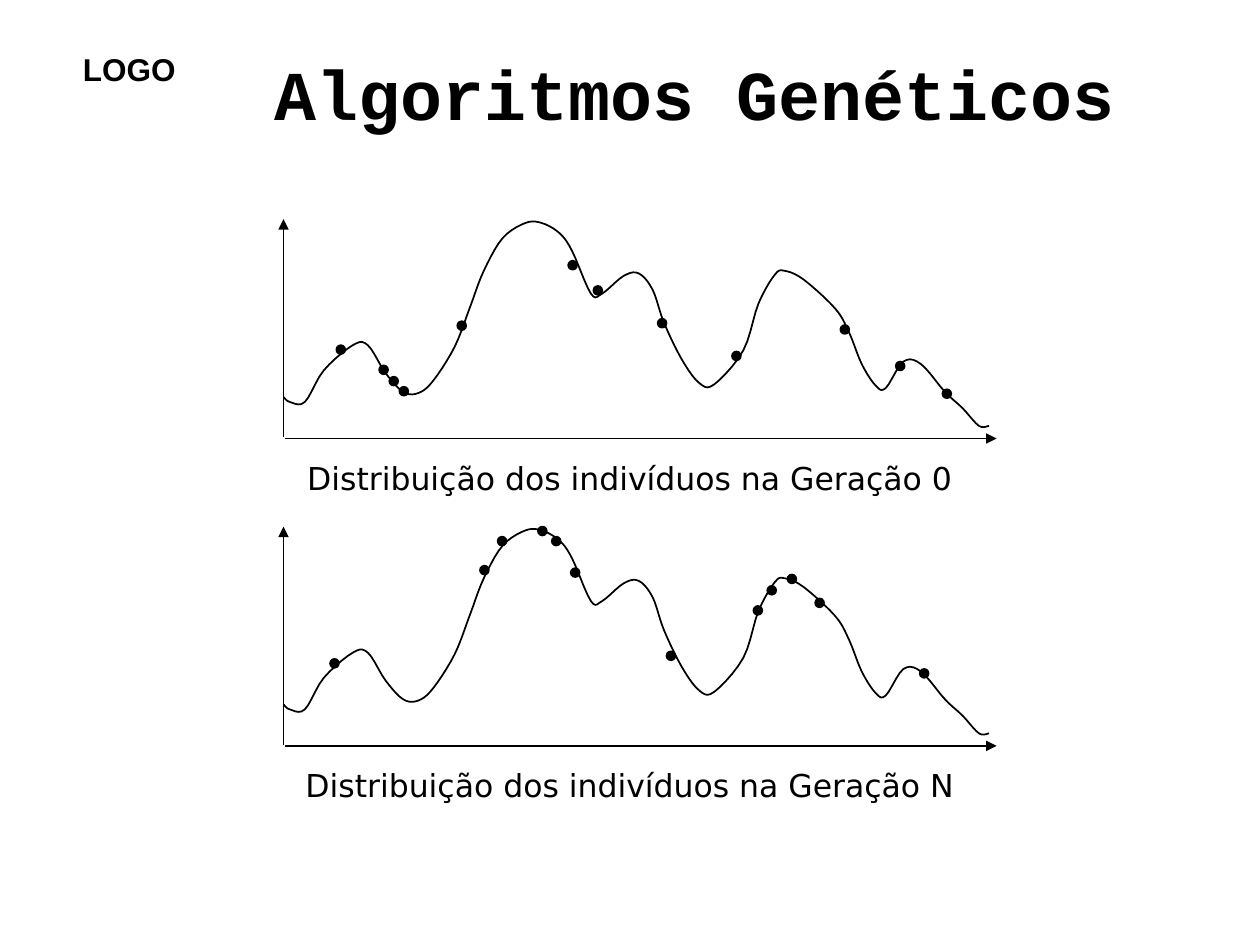
from dataclasses import dataclass

from lxml.etree import SubElement
from pptx import Presentation
from pptx.dml.color import RGBColor
from pptx.enum.shapes import MSO_CONNECTOR as Connector, MSO_SHAPE as Shape
from pptx.enum.text import MSO_ANCHOR as Anchor, PP_ALIGN as Align
from pptx.oxml.ns import qn
from pptx.slide import Slide
from pptx.util import Inches, Pt

Point = tuple[float, float]

BLACK = "000000"
DOT_SIZE = 0.07
AXIS_LEFT, AXIS_RIGHT = 2.25, 7.91
AXIS_HEIGHT = 1.74
FLOOR = 3.48  # height on the page from which the curve is measured
STEPS = 5  # line segments between two knots of the curve

CURVE_KNOTS: list[Point] = [
    (2.25, 3.15), (2.3, 3.19), (2.42, 3.19), (2.57, 2.94), (2.8, 2.74), (2.92, 2.74),
    (3.06, 2.96), (3.2, 3.11), (3.32, 3.12), (3.44, 3.02), (3.61, 2.75), (3.73, 2.44),
    (3.84, 2.15), (3.99, 1.89), (4.17, 1.77), (4.3, 1.77), (4.44, 1.85), (4.54, 1.99),
    (4.69, 2.33), (4.78, 2.33), (4.95, 2.19), (5.07, 2.17), (5.18, 2.3), (5.27, 2.56),
    (5.41, 2.85), (5.55, 3.04), (5.67, 3.05), (5.9, 2.78), (6.02, 2.41), (6.15, 2.18),
    (6.23, 2.15), (6.38, 2.22), (6.63, 2.45), (6.74, 2.64), (6.84, 2.89), (6.95, 3.06),
    (7.03, 3.08), (7.17, 2.87), (7.31, 2.89), (7.5, 3.11), (7.64, 3.24), (7.77, 3.38),
    (7.85, 3.38),
]


@dataclass
class Label:
    text: str
    left: float
    top: float
    width: float
    height: float
    font: str
    size: int
    bold: bool = False
    align: Align = Align.LEFT
    wrap: bool = False


@dataclass
class Generation:
    name: str
    baseline: float
    individuals: list[Point]  # top left corner of each dot


GENERATIONS = [
    Generation("0", FLOOR, [
        (3.63, 2.55), (2.67, 2.74), (3.01, 2.9), (3.09, 2.99), (3.17, 3.07), (4.71, 2.27),
        (4.51, 2.07), (5.22, 2.53), (5.81, 2.79), (6.67, 2.58), (7.48, 3.09), (7.11, 2.87),
    ]),
    Generation("N", 5.92, [
        (7.3, 5.31), (6.47, 4.75), (6.25, 4.56), (6.09, 4.65), (5.98, 4.81), (5.29, 5.17),
        (4.53, 4.51), (4.27, 4.18), (4.38, 4.26), (3.95, 4.26), (3.81, 4.49), (2.62, 5.23),
    ]),
]


def color(value: str) -> RGBColor:
    return RGBColor.from_string(value)


def outline(shape) -> None:
    shape.line.color.rgb = color(BLACK)
    shape.line.width = Pt(1)


def add_label(page: Slide, label: Label) -> None:
    box = page.shapes.add_textbox(
        Inches(label.left), Inches(label.top), Inches(label.width), Inches(label.height))
    frame = box.text_frame
    frame.word_wrap = label.wrap
    frame.vertical_anchor = Anchor.MIDDLE
    para = frame.paragraphs[0]
    para.text = label.text
    para.alignment = label.align
    para.font.name = label.font
    para.font.size = Pt(label.size)
    para.font.bold = label.bold
    para.font.color.rgb = color(BLACK)


def add_axis(page: Slide, start: Point, end: Point) -> None:
    """Draw an axis with its arrowhead at the end point."""
    axis = page.shapes.add_connector(Connector.STRAIGHT, *map(Inches, start + end))
    outline(axis)
    SubElement(axis.line._get_or_add_ln(), qn("a:tailEnd"), type="triangle")
    SubElement(axis._element.spPr, qn("a:effectLst"))


def spline(knots: list[Point]) -> list[Point]:
    """Return points of a Catmull-Rom curve through the knots."""
    padded = [knots[0], *knots, knots[-1]]
    points = [knots[0]]
    for window in zip(padded, padded[1:], padded[2:], padded[3:]):
        for step in range(1, STEPS + 1):
            t = step / STEPS
            x, y = (
                b + t * (c - a + t * (2 * a - 5 * b + 4 * c - d
                                      + t * (3 * (b - c) + d - a))) / 2
                for a, b, c, d in zip(*window))
            points.append((x, y))
    return points


def add_curve(page: Slide, drop: float) -> None:
    """Draw the fitness curve, moved down by drop inches."""
    points = [(Inches(x), Inches(y + drop)) for x, y in spline(CURVE_KNOTS)]
    builder = page.shapes.build_freeform(*points[0])
    builder.add_line_segments(points[1:], close=False)
    curve = builder.convert_to_shape()
    curve.shadow.inherit = False
    curve.fill.background()
    outline(curve)


def add_individual(page: Slide, corner: Point) -> None:
    size = Inches(DOT_SIZE)
    dot = page.shapes.add_shape(Shape.OVAL, *map(Inches, corner), size, size)
    dot.shadow.inherit = False
    dot.fill.solid()
    dot.fill.fore_color.rgb = color(BLACK)
    outline(dot)


def add_generation(page: Slide, generation: Generation) -> None:
    base = generation.baseline
    add_axis(page, (AXIS_LEFT, base - 0.01), (AXIS_LEFT, base - AXIS_HEIGHT))
    add_axis(page, (AXIS_LEFT + 0.01, base), (AXIS_RIGHT, base))
    add_curve(page, base - FLOOR)
    add_label(page, Label(
        f"Distribuição dos indivíduos na Geração {generation.name}",
        2.3, base + 0.11, 5.4, 0.4, "DejaVu Sans", 18, align=Align.CENTER))
    for corner in generation.individuals:
        add_individual(page, corner)


def main() -> None:
    deck = Presentation()
    deck.slide_width, deck.slide_height = Inches(10), Inches(7.5)
    page = deck.slides.add_slide(deck.slide_layouts[6])
    add_label(page, Label("LOGO", 0.56, 0.35, 0.94, 0.4, "Arial", 18, bold=True))
    add_label(page, Label("Algoritmos Genéticos", 2.08, 0.25, 7.42, 0.97,
                          "Courier New", 40, bold=True, wrap=True))
    for generation in GENERATIONS:
        add_generation(page, generation)
    deck.save("out.pptx")


if __name__ == "__main__":
    main()
